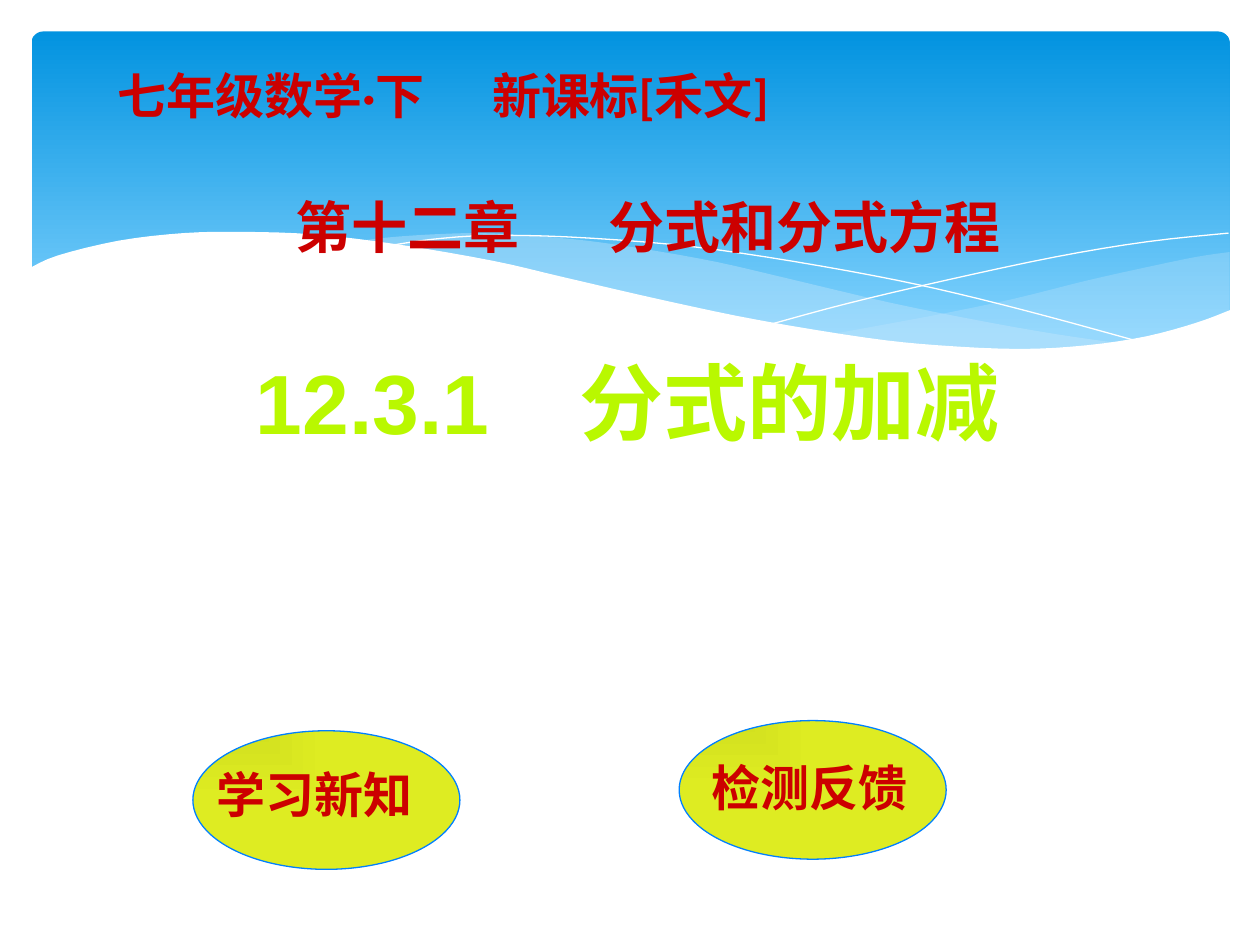
from pptx import Presentation
from pptx.dml.color import RGBColor
from pptx.enum.shapes import MSO_SHAPE
from pptx.enum.text import MSO_ANCHOR, PP_ALIGN
from pptx.oxml.ns import qn
from pptx.util import Pt
from lxml import etree

ROUNDED, OVAL = MSO_SHAPE.ROUNDED_RECTANGLE, MSO_SHAPE.OVAL
TOP, LEFT = MSO_ANCHOR.TOP, PP_ALIGN.LEFT
CJK = "Noto Sans CJK SC"
RED, WHITE, PALE = "CC0000", "FFFFFF", "C6E7FC"


def rgb(value):
    return RGBColor.from_string(value)


def write(s, box, text, size, font, color, margin, tab=None):
    s.left, s.top, s.width, s.height = [Pt(v) for v in box]
    tf = s.text_frame
    tf.word_wrap = True
    tf.vertical_anchor = TOP
    tf.margin_left = Pt(margin)
    p = tf.paragraphs[0]
    p.alignment = LEFT
    if tab:
        tabs = etree.SubElement(p._p.get_or_add_pPr(), qn("a:tabLst"))
        etree.SubElement(tabs, qn("a:tab"), pos=str(Pt(tab)), algn="l")
    r = p.add_run()
    r.text = text
    r.font.size, r.font.bold, r.font.name = Pt(size), True, font
    r.font.color.rgb = rgb(color)
    etree.SubElement(r._r.get_or_add_rPr(), qn("a:ea"), typeface=CJK)


prs = Presentation()
prs.slide_width, prs.slide_height = Pt(720), Pt(540)
slide = prs.slides.add_slide(prs.slide_layouts[5])
shapes = slide.shapes
title = shapes.title

sky = shapes.add_shape(ROUNDED, Pt(18), Pt(18), Pt(684.7), Pt(194.4))
sky.adjustments[0] = 0.034
sky.shadow.inherit = False
sky.line.fill.background()
sky.fill.gradient()
sky.fill.gradient_angle = 270
for stop, color, position in zip(sky.fill.gradient_stops, ("0293E0", "83D3FE"), (0, 0.9)):
    stop.color.rgb = rgb(color)
    stop.position = position

waves = [
    (PALE, 29, [
        [(702.7, 144), (682.6, 147), (652, 153.4), (620, 160.6), (580, 170.6),
         (542, 178.6), (508, 185), (476, 190.8)],
        [(476, 190.8), (507.6, 195), (545, 198.7), (578, 200), (615, 199.4),
         (646, 196.6), (674, 191), (693.4, 181.4), (702.7, 177.8)]]),
    (PALE, 40, [
        [(643, 196.6), (602.6, 190.8), (558, 182.9), (508, 172.8), (453, 159.8),
         (410, 149.8), (370, 142.6), (335, 137.5), (302, 134.6), (274, 133.2),
         (248, 133.9), (225, 135.4), (206, 137.5)],
        [(206, 137.5), (246, 143.3), (291, 152), (323, 159.8), (382, 172.8),
         (433, 183.6), (479, 191.5), (520, 197.3), (557, 199.4), (589, 200),
         (617, 199.4), (643, 196.6)]]),
    (None, 100, [
        [(222.5, 140.4), (247, 136.8), (278.6, 134.6), (324, 135.4), (383.8, 139.7),
         (438, 146.9), (500, 157.7), (547, 167.8), (598, 180.7), (653, 195.8)]]),
    (None, 100, [
        [(441.4, 185), (484, 173.5), (538.6, 160.6), (602.6, 146.9), (655, 138.2),
         (702, 133.2)]]),
    (WHITE, 100, [
        [(16.6, 153.4), (33, 146), (68, 137.5), (105, 133.2), (139, 132.5),
         (180, 134), (227.5, 139.7), (281.5, 149), (322, 158.4), (381, 172),
         (434, 183), (495, 193), (536, 197.3), (582.5, 199.4), (621, 197.3),
         (655, 192.2), (684, 184.3), (703.4, 177)],
        [(703.4, 177), (703.4, 236.9)],
        [(703.4, 236.9), (16.6, 236.9)]]),
]
STEPS = 4
for fill, opacity, curves in waves:
    points = [curves[0][0]]
    for knots in curves:
        ends = [knots[0], *knots, knots[-1]]
        for a, b, c, d in zip(ends, ends[1:], ends[2:], ends[3:]):
            for step in range(1, STEPS + 1):
                t = step / STEPS
                points.append([
                    b[i] + t * (c[i] - a[i]) / 2
                    + t * t * (2 * a[i] - 5 * b[i] + 4 * c[i] - d[i]) / 2
                    + t ** 3 * (3 * b[i] - a[i] - 3 * c[i] + d[i]) / 2
                    for i in (0, 1)])
    points = [(Pt(x), Pt(y)) for x, y in points]
    builder = shapes.build_freeform(*points[0])
    builder.add_line_segments(points[1:], close=fill is not None)
    s = builder.convert_to_shape()
    s.shadow.inherit = False
    if fill:
        s.fill.solid()
        s.fill.fore_color.rgb = rgb(fill)
        s.line.fill.background()
        if opacity < 100:
            clr = s.element.spPr.find(".//" + qn("a:srgbClr"))
            etree.SubElement(clr, qn("a:alpha"), val=str(opacity * 1000))
    else:
        s.fill.background()
        s.line.color.rgb = rgb(WHITE)
        s.line.width = Pt(0)

write(shapes.add_textbox(0, 0, 0, 0), (161.3, 106.6, 489.6, 46), "第十二章\t分式和分式方程",
      32, "Calibri", RED, 7.7, 178.5)

buttons = [
    ((110.2, 417.6), (110.2, 433.4), "学习新知", 13.7),
    ((388.1, 411.8), (399.6, 429.1), "检测反馈", 7.2),
]
for oval_at, text_at, label, margin in buttons:
    s = shapes.add_shape(OVAL, *[Pt(v) for v in oval_at], Pt(152.6), Pt(79.2))
    s.shadow.inherit = False
    s.line.color.rgb = rgb("0080FF")
    s.line.width = Pt(0.75)
    s.fill.gradient()
    for stop, color, position in zip(s.fill.gradient_stops, ("D3E11F", "DEEC22"), (0, 1)):
        stop.color.rgb = rgb(color)
        stop.position = position
    grad = s.element.spPr.find(qn("a:gradFill"))
    grad.remove(grad.find(qn("a:lin")))
    radial = etree.SubElement(grad, qn("a:path"), path="rect")
    etree.SubElement(radial, qn("a:fillToRect"), r="100000", b="100000")
    write(shapes.add_textbox(0, 0, 0, 0), (*text_at, 158.4, 41), label, 28, CJK, RED, margin)

shapes.element.append(title.element)
write(title, (65.5, 196.6, 587.5, 65.5), "12.3.1\t分式的加减", 48, "Arial", "B9F800", 80.6, 185)
write(shapes.add_textbox(0, 0, 0, 0), (56.2, 33.8, 414, 41), "七年级数学·下\t新课标[禾文]",
      28, "Calibri", RED, 11, 214)

prs.save("out.pptx")
